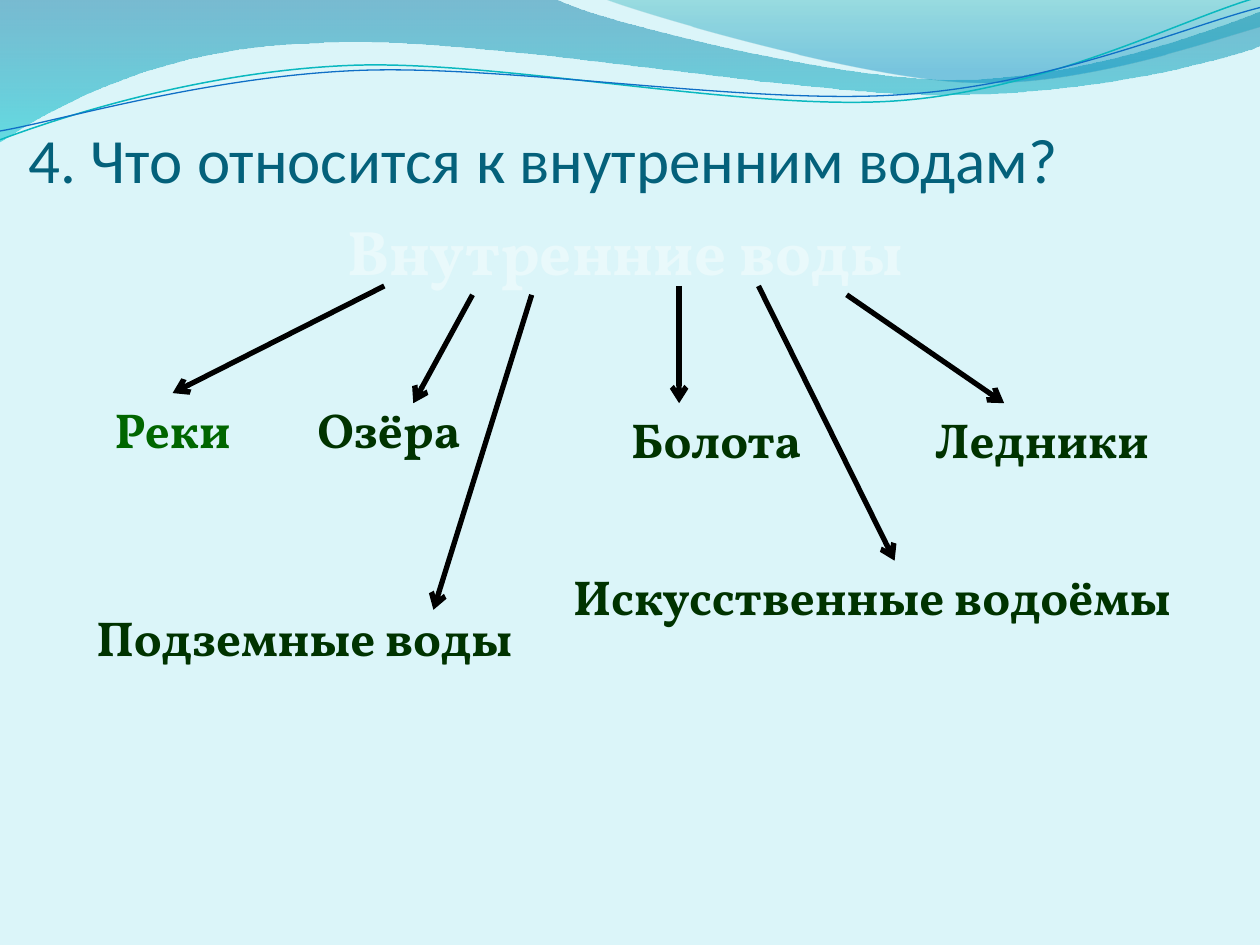
"""Build a slide on the kinds of inland waters, with a wave header and a branching diagram."""
import pptx
import pptx.util
import pptx.dml.color
import pptx.enum.shapes
import pptx.enum.text
import pptx.oxml
import pptx.oxml.ns
from pptx.util import Inches

RGBColor = pptx.dml.color.RGBColor
PP_ALIGN = pptx.enum.text.PP_ALIGN
ANCHOR = pptx.enum.text.MSO_ANCHOR
qn = pptx.oxml.ns.qn

BACKGROUND = RGBColor(0xDB, 0xF5, 0xF9)
BLUE = RGBColor(0x00, 0x74, 0xA1)
CYAN = RGBColor(0x00, 0xC6, 0xCF)
TEAL = RGBColor(0x00, 0xA1, 0xA9)
SKY = RGBColor(0x00, 0x8B, 0xBF)
TEAL_LINE = RGBColor(0x0A, 0xB8, 0xBF)
BLUE_LINE = RGBColor(0x0F, 0x6F, 0xC6)
TITLE = RGBColor(0x04, 0x61, 0x7B)
PALE = RGBColor(0xE9, 0xF9, 0xFB)
GREEN = RGBColor(0x00, 0x66, 0x00)
DARK_GREEN = RGBColor(0x00, 0x33, 0x00)
BLACK = RGBColor(0x00, 0x00, 0x00)

prs = pptx.Presentation()
prs.slide_width, prs.slide_height = Inches(10), Inches(7.5)
s = prs.slides.add_slide(prs.slide_layouts[6])
s.background.fill.solid()
s.background.fill.fore_color.rgb = BACKGROUND


def add_wave(segments, close):
    """Draw an outline from points (2 numbers) and Bezier curves (6 numbers)."""
    points = [(Inches(seg[i]), Inches(seg[i + 1]))
              for seg in segments for i in range(0, len(seg), 2)]
    fb = s.shapes.build_freeform(*points[0])
    fb.add_line_segments(points[1:], close=close)
    sp = fb.convert_to_shape()
    sp.shadow.inherit = False
    lines = iter(list(sp._element.spPr.iter(qn("a:lnTo"))))
    for seg in segments[1:]:
        line = next(lines)
        if len(seg) == 6:
            curve = line.makeelement(qn("a:cubicBezTo"), {})
            line.addprevious(curve)
            for old in (line, next(lines), next(lines)):
                curve.append(old[0])
                old.getparent().remove(old)
    return sp


def add_text(text, left, top, width, height, size, color, font="Vollkorn",
             align=PP_ALIGN.CENTER, wrap=False):
    """Add a one-paragraph text box."""
    sp = s.shapes.add_textbox(Inches(left), Inches(top), Inches(width), Inches(height))
    sp.text_frame.word_wrap = wrap
    p = sp.text_frame.paragraphs[0]
    p.text = text
    p.alignment = align
    p.font.name, p.font.size, p.font.bold = font, pptx.util.Pt(size), font == "Vollkorn"
    p.font.color.rgb = color
    return sp


filled_waves = [
    ([(0, 0), (4.4, -0.01), (4.76, 0.17, 6.64, 0.63, 7.58, 0.63),
      (8.53, 0.63, 9.58, 0.26, 10, 0.09), (10.01, 0.36),
      (9.83, 0.44, 8.7, 0.76, 7.46, 0.75), (6.22, 0.75, 3.82, 0.28, 2.57, 0.34),
      (1.29, 0.36, 0.46, 0.83, -0.01, 1.13), (0, 0)],
     [(0, BLUE, 45), (1, CYAN, 55)]),
    ([(4.79, -0.01), (5.09, 0.11, 6.82, 0.62, 7.69, 0.65),
      (8.56, 0.69, 9.61, 0.32, 10, 0.21), (10, 0), (4.79, -0.01)],
     [(0, TEAL, 30), (0.8, SKY, 45)]),
]
for segments, stops in filled_waves:
    sp = add_wave(segments, True)
    sp.line.fill.background()
    sp.fill.gradient()
    sp.fill.gradient_angle = 270
    for stop, (position, color, opacity) in zip(sp.fill.gradient_stops, stops):
        stop.position = position
        stop.color.rgb = color
    for clr, (_, _, opacity) in zip(sp._element.spPr.iter(qn("a:srgbClr")), stops):
        clr.append(clr.makeelement(qn("a:alpha"), {"val": str(opacity * 1000)}))

line_waves = [
    ([(0, 1.11), (0.48, 0.93, 1.58, 0.57, 2.77, 0.52), (3.95, 0.47, 5.93, 0.89, 7.13, 0.8),
      (8.33, 0.71, 9.38, 0.15, 9.98, -0.02)], TEAL_LINE, 0.85),
    ([(0, 1.04), (0.47, 0.96, 1.64, 0.61, 2.83, 0.56), (4.03, 0.51, 5.97, 0.84, 7.17, 0.75),
      (8.36, 0.67, 9.41, 0.21, 10, 0.06)], BLUE_LINE, 0.75),
]
for segments, color, width in line_waves:
    sp = add_wave(segments, False)
    sp.fill.background()
    sp.line.color.rgb = color
    sp.line.width = pptx.util.Pt(width)

tf = add_text("4. Что относится к внутренним водам?", 0.23, 0.32, 9.53, 1.24, 36, TITLE,
              "Calibri", PP_ALIGN.LEFT, True).text_frame
tf.vertical_anchor = ANCHOR.BOTTOM
tf.margin_left = tf.margin_right = tf.margin_bottom = 0

add_text("Внутренние воды", 2.5, 1.64, 4.92, 0.71, 36, PALE, wrap=True)
rivers = add_text("Реки", 0.55, 3.12, 1.64, 0.57, 28, GREEN, wrap=True)
for text, left, top, width, align in [
    ("Озёра", 2.42, 3.12, 1.42, PP_ALIGN.LEFT),
    ("Болота", 4.82, 3.2, 1.73, PP_ALIGN.CENTER),
    ("Подземные воды", 0.55, 4.77, 3.73, PP_ALIGN.CENTER),
    ("Ледники", 7.27, 3.2, 2, PP_ALIGN.CENTER),
    ("Искусственные водоёмы", 4.45, 4.45, 5.3, PP_ALIGN.LEFT),
]:
    add_text(text, left, top, width, 0.57, 28, DARK_GREEN, align=align)

for x1, y1, x2, y2, target in [
    (3.05, 2.27, 1.37, 3.12, rivers),
    (3.75, 2.34, 3.28, 3.2, None),
    (5.39, 2.27, 5.39, 3.2, None),
    (6.72, 2.34, 7.97, 3.2, None),
    (4.22, 2.34, 3.44, 4.84, None),
    (6.02, 2.27, 7.1, 4.45, None),
]:
    arrow = s.shapes.add_connector(pptx.enum.shapes.MSO_CONNECTOR.STRAIGHT,
                                   Inches(x1), Inches(y1), Inches(x2), Inches(y2))
    if target is not None:
        arrow.end_connect(target, 0)
    arrow.line.color.rgb = BLACK
    arrow.line.width = pptx.util.Pt(3)
    ln = arrow.line._get_or_add_ln()
    ln.append(ln.makeelement(qn("a:tailEnd"), {"type": "arrow"}))
    spPr = arrow._element.spPr
    spPr.append(spPr.makeelement(qn("a:effectLst"), {}))

prs.save("out.pptx")
